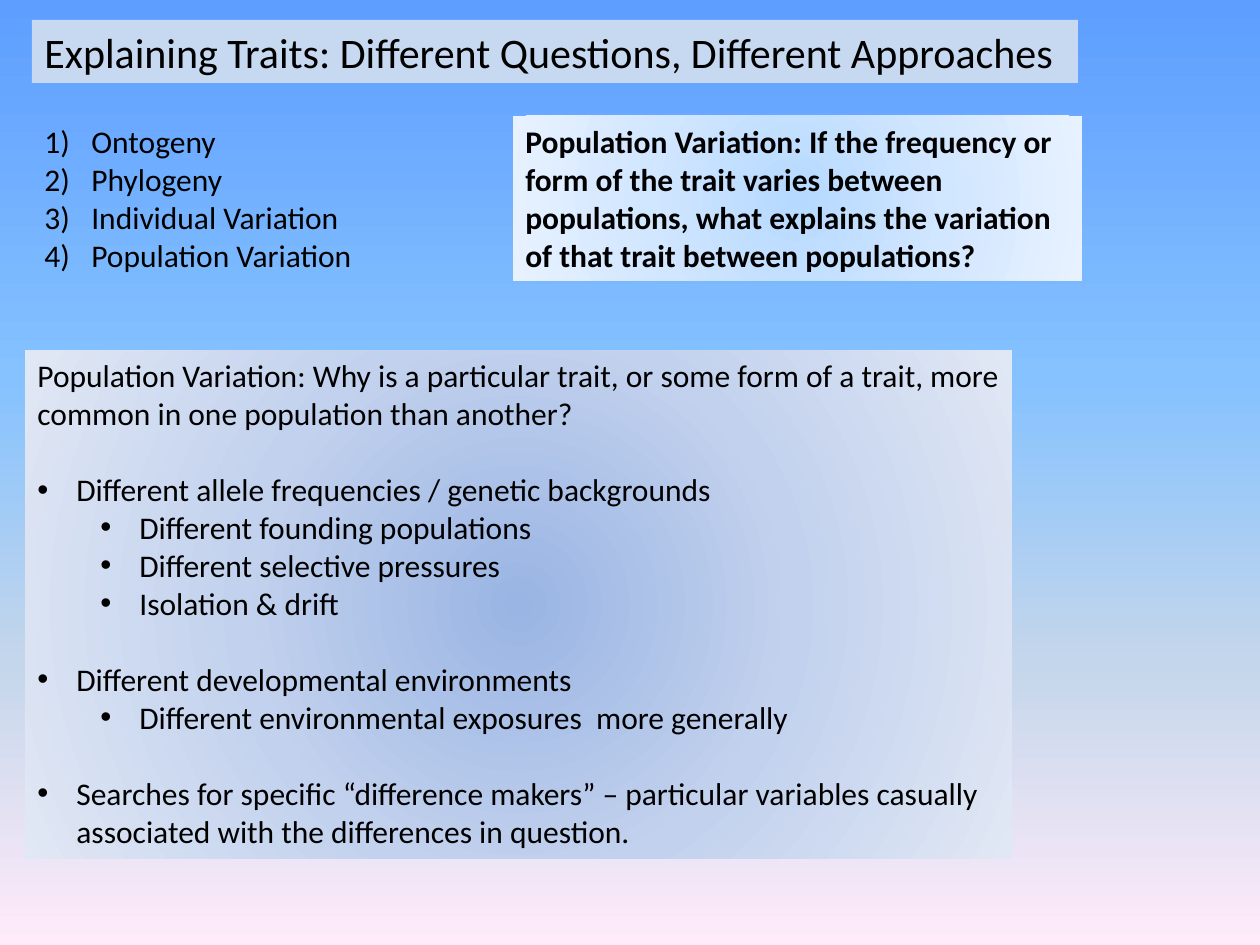
import pptx
import pptx.dml.color
import pptx.enum.shapes
import pptx.enum.text
import pptx.oxml
import pptx.oxml.ns
import pptx.util
from dataclasses import dataclass

EMU_PER_PX = 914400 / 126
RADIAL = ('<a:path path="circle"><a:fillToRect l="50000" t="50000" '
          'r="50000" b="50000"/></a:path>')
DOWNWARD = '<a:lin ang="5400000" scaled="0"/>'
NUMBER = ('<a:buFont {ns} typeface="+mj-lt"/>', '<a:buAutoNum {ns} type="arabicParenR"/>')
BULLET = ('<a:buFont {ns} typeface="Arial"/>', '<a:buChar {ns} char="•"/>')


@dataclass(frozen=True)
class Theme:
    font: str = "Calibri"
    ink: str = "000000"
    title_size: int = 24
    body_size: int = 18
    section_gap: int = 22
    title_fill: str = "C6D9F1"
    sky: tuple = ((0, "5E9EFF"), (40, "85C2FF"), (70, "C4D6EB"), (100, "FFEBFA"))
    answer_fill: tuple = ((0, "9AB5E4"), (50, "C2D1ED"), (100, "E1E8F5"))
    question_fill: tuple = ((0, "B5D9FF"), (50, "D1E6FF"), (100, "E8F2FF"))


@dataclass(frozen=True)
class Line:
    text: str
    level: int = 0
    marker: tuple = ()
    indent: int = 0
    hanging: int = 0
    gap: int = 0


def px(length):
    return pptx.util.Emu(round(length * EMU_PER_PX))


def xml(markup):
    return pptx.oxml.parse_xml(markup.format(ns=pptx.oxml.ns.nsdecls("a")))


class SlideBuilder:
    def __init__(self, deck, theme):
        self.theme = theme
        self.page = deck.slides.add_slide(deck.slide_layouts[6])

    def gradient(self, fill, owner, stops, direction):
        """Swap a placeholder solid fill for a gradient with any number of stops."""
        fill.solid()
        fill.fore_color.rgb = pptx.dml.color.RGBColor.from_string(stops[0][1])
        solid = owner.find(".//" + pptx.oxml.ns.qn("a:solidFill"))
        marks = "".join(f'<a:gs pos="{position * 1000}"><a:srgbClr val="{color}"/></a:gs>'
                        for position, color in stops)
        solid.getparent().replace(solid, xml(
            '<a:gradFill {ns} rotWithShape="1"><a:gsLst>' + marks + "</a:gsLst>"
            + direction + "</a:gradFill>"))

    def background(self, stops):
        self.gradient(self.page.background.fill, self.page.element, stops, DOWNWARD)

    def text_box(self, area, lines, **style):
        box = self.page.shapes.add_textbox(*map(px, area))
        self.set_lines(box.text_frame, lines, **style)

    def panel(self, area, fill, lines, **style):
        box = self.page.shapes.add_shape(
            pptx.enum.shapes.MSO_SHAPE.RECTANGLE, *map(px, area))
        box.shadow.inherit = False
        box.line.fill.background()
        if isinstance(fill, str):
            box.fill.solid()
            box.fill.fore_color.rgb = pptx.dml.color.RGBColor.from_string(fill)
        else:
            self.gradient(box.fill, box.element.spPr, fill, RADIAL)
        self.set_lines(box.text_frame, lines, **style)

    def set_lines(self, frame, lines, size=None, bold=False, wrap=True):
        frame_format = {
            "word_wrap": wrap,
            "auto_size": pptx.enum.text.MSO_AUTO_SIZE.SHAPE_TO_FIT_TEXT,
            "vertical_anchor": pptx.enum.text.MSO_ANCHOR.TOP,
        }
        for name, value in frame_format.items():
            setattr(frame, name, value)
        span_format = {
            "name": self.theme.font,
            "size": pptx.util.Pt(size or self.theme.body_size),
            "bold": bold,
        }
        for index, line in enumerate(lines):
            para = frame.add_paragraph() if index else frame.paragraphs[0]
            para.alignment = pptx.enum.text.PP_ALIGN.LEFT
            para.level = line.level
            if line.gap:
                para.space_before = pptx.util.Pt(line.gap)
            if line.marker:
                properties = para._p.get_or_add_pPr()
                properties.set("marL", str(px(line.indent)))
                properties.set("indent", str(-px(line.hanging)))
                for markup in line.marker:
                    properties.append(xml(markup))
            span = para.add_run()
            span.text = line.text
            for name, value in span_format.items():
                setattr(span.font, name, value)
            span.font.color.rgb = pptx.dml.color.RGBColor.from_string(self.theme.ink)


def numbered(text):
    return Line(text, marker=NUMBER, indent=47, hanging=47)


def bullet(text, level=0, gap=0):
    return Line(text, level, BULLET, indent=39 + 63 * level, hanging=39, gap=gap)


def main():
    theme = Theme()
    deck = pptx.Presentation()
    deck.slide_width, deck.slide_height = px(1260), px(945)
    slide = SlideBuilder(deck, theme)
    slide.background(theme.sky)

    # Answer panel
    gap = theme.section_gap
    slide.panel((25, 350, 987, 509), theme.answer_fill, [
        Line("Population Variation: Why is a particular trait, or some form of a trait, "
             "more common in one population than another?"),
        bullet("Different allele frequencies / genetic backgrounds", gap=gap),
        bullet("Different founding populations", level=1),
        bullet("Different selective pressures", level=1),
        bullet("Isolation & drift", level=1),
        bullet("Different developmental environments", gap=gap),
        bullet("Different environmental exposures  more generally", level=1),
        bullet("Searches for specific “difference makers” – particular variables casually "
               "associated with the differences in question.", gap=gap),
    ])

    # Title
    slide.panel((32, 20, 1046, 63), theme.title_fill,
                [Line("Explaining Traits: Different Questions, Different Approaches")],
                size=theme.title_size, wrap=False)

    # Kinds of explanation
    topics = ("Ontogeny", "Phylogeny", "Individual Variation", "Population Variation")
    slide.text_box((32, 116, 336, 165), [numbered(topic) for topic in topics], wrap=False)

    # Question panel
    slide.panel((513, 116, 569, 165), theme.question_fill, [
        Line("Population Variation: If the frequency or form of the trait varies between "
             "populations, what explains the variation of that trait between populations?"),
    ], bold=True)

    deck.save("out.pptx")


if __name__ == "__main__":
    main()
